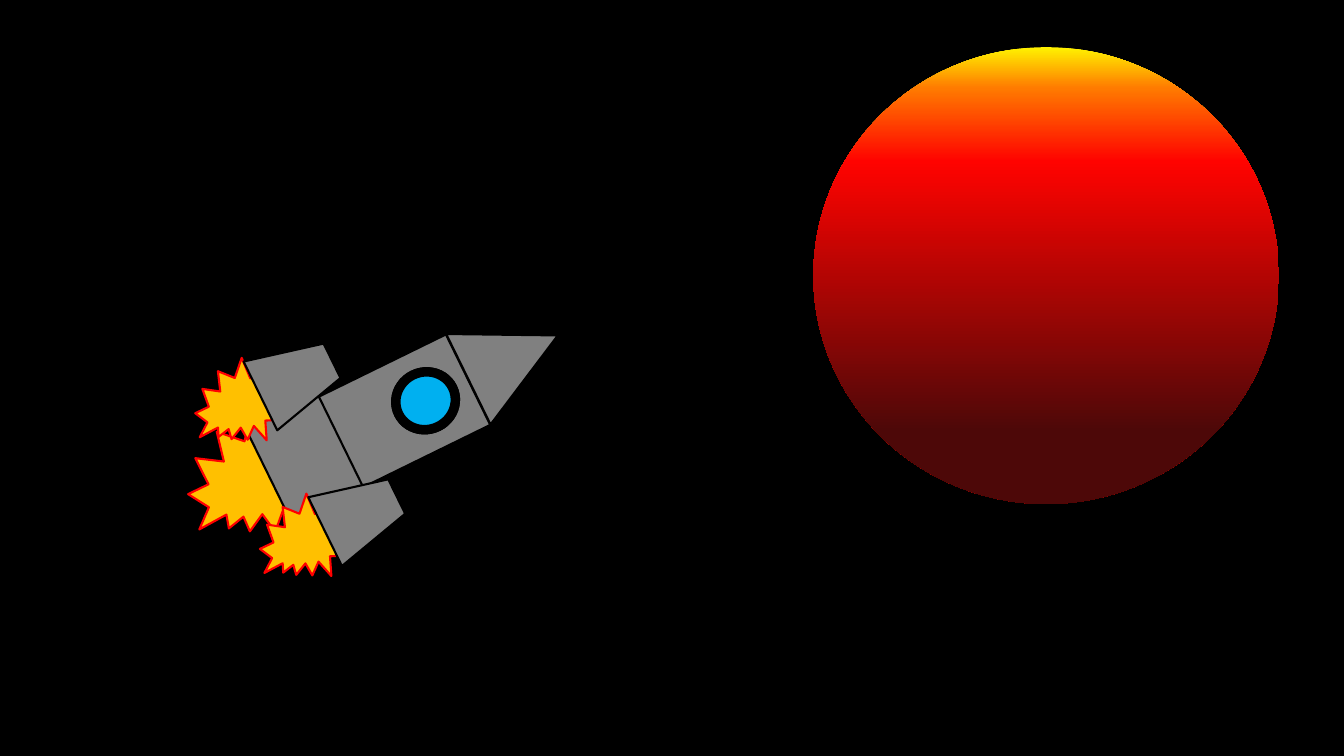
from lxml.etree import SubElement
from pptx import Presentation
from pptx.dml.color import RGBColor
from pptx.enum.shapes import MSO_SHAPE as SHAPE
from pptx.oxml.ns import qn
from pptx.util import Cm, Pt

BLACK = RGBColor(0x00, 0x00, 0x00)
GREY = RGBColor(0x80, 0x80, 0x80)
AMBER = RGBColor(0xFF, 0xC0, 0x00)
RED = RGBColor(0xFF, 0x00, 0x00)
SKY = RGBColor(0x00, 0xB0, 0xF0)

# Boxes are left, top, width, height in cm
SUN = (20.5, 1.19, 11.73, 11.51)
SUN_STOPS = [
    (0, RGBColor(0xFF, 0xF2, 0x00)),
    (9, RGBColor(0xFF, 0x7A, 0x00)),
    (25, RGBColor(0xFF, 0x03, 0x00)),
    (84, RGBColor(0x4D, 0x08, 0x08)),
]

TILT = 63.9
STYLES = {
    "metal": dict(fill=GREY, line=BLACK, rotation=TILT),
    "glass": dict(fill=SKY, line=BLACK, rotation=TILT),
    "frame": dict(fill=BLACK, line=BLACK, rotation=TILT),
    "main flame": dict(fill=AMBER, line=RED, rotation=25.3),
    "side flame": dict(fill=AMBER, line=RED, rotation=29),
}
WINDOW = (9.91, 9.25, 1.63, 1.7)
FRAME_THICKNESS = 0.114
HULL = [
    (SHAPE.RECTANGLE, "metal", (8.38, 8.23, 2.54, 4.78)),
    (SHAPE.EXPLOSION2, "main flame", (4.9, 10.06, 3.78, 3.91)),
    (SHAPE.TRAPEZOID, "metal", (5.77, 10.59, 3.86, 2.01)),
]
BOOSTERS = [(6.71, 12.2), (5.08, 8.78)]
FLAME_SIZE = (2.34, 2.72)
FIN_OFFSET = (1.42, -0.25)
FIN_SIZE = (1.93, 2.01)
NOSE = [
    (SHAPE.FLOWCHART_EXTRACT, "metal", (11.66, 7.75, 2.54, 2.51)),
    (SHAPE.OVAL, "glass", WINDOW),
    (SHAPE.DONUT, "frame", WINDOW),
]


def booster_parts(x, y):
    """A side flame with its fin in front of it."""
    dx, dy = FIN_OFFSET
    return [
        (SHAPE.EXPLOSION2, "side flame", (x, y, *FLAME_SIZE)),
        (SHAPE.TRAPEZOID, "metal", (x + dx, y + dy, *FIN_SIZE)),
    ]


def add_part(shapes, kind, box):
    sp = shapes.add_shape(kind, *(Cm(v) for v in box))
    sp.shadow.inherit = False
    return sp


def set_gradient(sp, stops):
    """Fill from top to bottom with any number of colour stops."""
    sp.fill.gradient()
    sp.fill.gradient_angle = 270
    stop_list = sp.element.spPr.find(qn("a:gradFill")).find(qn("a:gsLst"))
    for old in list(stop_list):
        stop_list.remove(old)
    for percent, color in stops:
        stop = SubElement(stop_list, qn("a:gs"), pos=str(percent * 1000))
        SubElement(stop, qn("a:srgbClr"), val=str(color))


def main():
    prs = Presentation()
    prs.slide_width, prs.slide_height = Cm(33.87), Cm(19.05)
    s = prs.slides.add_slide(prs.slide_layouts[6])
    s.background.fill.solid()
    s.background.fill.fore_color.rgb = BLACK

    sun = add_part(s.shapes, SHAPE.OVAL, SUN)
    set_gradient(sun, SUN_STOPS)
    sun.line.fill.background()

    rocket = s.shapes.add_group_shape()
    boosters = [part for corner in BOOSTERS for part in booster_parts(*corner)]
    for kind, style, box in HULL + boosters + NOSE:
        sp = add_part(rocket.shapes, kind, box)
        look = STYLES[style]
        sp.rotation = look["rotation"]
        sp.fill.solid()
        sp.fill.fore_color.rgb = look["fill"]
        sp.line.color.rgb = look["line"]
        sp.line.width = Pt(1.5)
        if kind == SHAPE.DONUT:
            sp.adjustments[0] = FRAME_THICKNESS

    prs.save("out.pptx")


if __name__ == "__main__":
    main()
